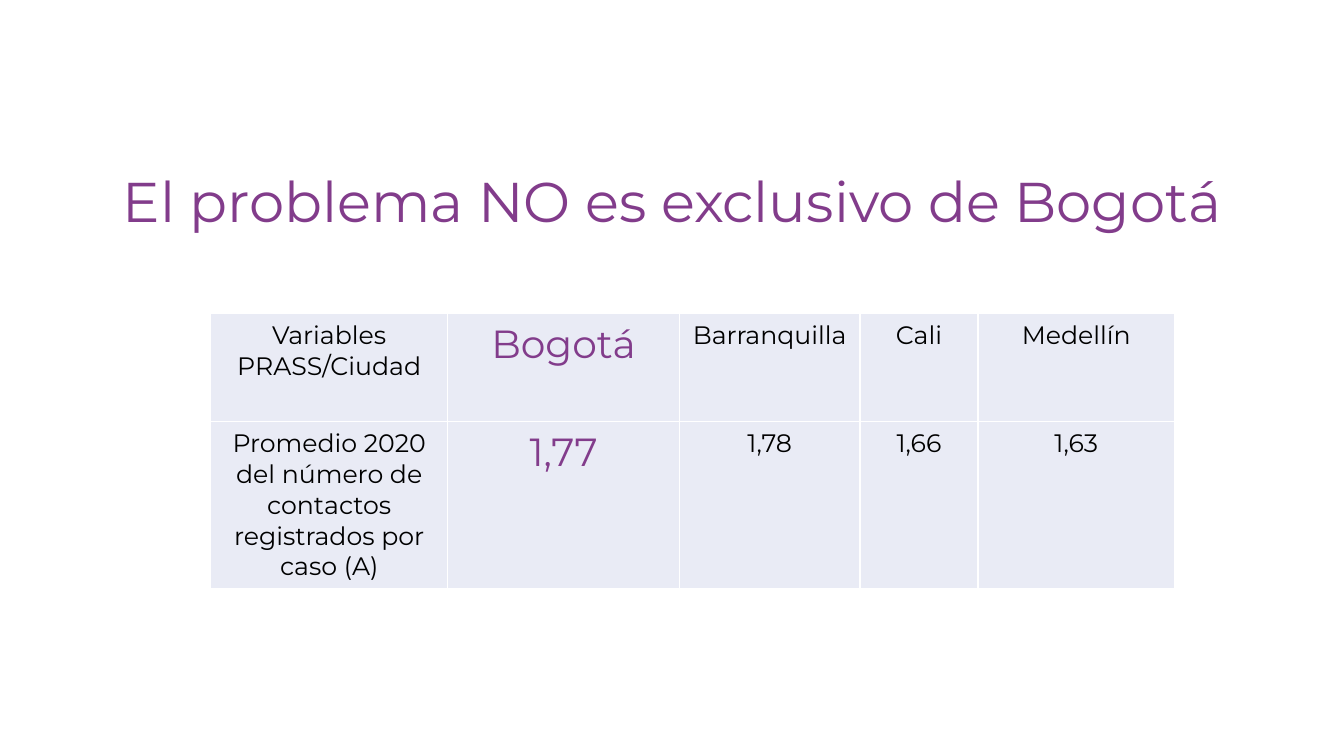
from lxml.etree import SubElement
from pptx import Presentation
from pptx.dml.color import RGBColor
from pptx.enum.text import MSO_ANCHOR as Anchor, PP_ALIGN as Align
from pptx.oxml.ns import qn
from pptx.util import Inches, Pt

PURPLE, BLACK, WHITE, PALE = "823C8B", "000000", "FFFFFF", "E9EBF5"


def color(value):
    return RGBColor.from_string(value)


class SlideBuilder:
    """Places elements by percentages of the slide's width and height."""

    font_name = "Montserrat"
    cell_margin = Inches(0.07)

    def __init__(self, presentation):
        self.width = presentation.slide_width
        self.height = presentation.slide_height
        self.slide = presentation.slides.add_slide(presentation.slide_layouts[6])

    def across(self, share):
        return round(self.width * share / 100)

    def down(self, share):
        return round(self.height * share / 100)

    def set_text(self, text_frame, text, size, text_color):
        text_frame.text = text
        text_frame.word_wrap = True
        paragraph = text_frame.paragraphs[0]
        paragraph.alignment = Align.CENTER
        for run in paragraph.runs:
            run.font.name = self.font_name
            run.font.size = Pt(size)
            run.font.color.rgb = color(text_color)
        return paragraph

    def title(self, text, left, top, width, height):
        shape = self.slide.shapes.add_textbox(
            self.across(left), self.down(top), self.across(width), self.down(height))
        shape.text_frame.vertical_anchor = Anchor.MIDDLE
        self.set_text(shape.text_frame, text, 40, PURPLE).line_spacing = 0.9

    def border(self, cell):
        properties = cell._tc.get_or_add_tcPr()
        for side in ("a:lnL", "a:lnR", "a:lnT", "a:lnB"):
            line = SubElement(properties, qn(side), w=str(Pt(1)))
            fill = SubElement(line, qn("a:solidFill"))
            SubElement(fill, qn("a:srgbClr"), val=WHITE)

    def table(self, rows, left, top, widths, heights, highlight):
        table = self.slide.shapes.add_table(
            len(rows), len(widths), self.across(left), self.down(top),
            self.across(sum(widths)), self.down(sum(heights))).table
        for column, width in zip(table.columns, widths):
            column.width = self.across(width)
        for row, height, texts in zip(table.rows, heights, rows):
            row.height = self.down(height)
            for index, (cell, text) in enumerate(zip(row.cells, texts)):
                cell.margin_left = cell.margin_right = self.cell_margin
                cell.margin_top = cell.margin_bottom = self.cell_margin
                self.border(cell)
                cell.fill.solid()
                cell.fill.fore_color.rgb = color(PALE)
                size, text_color = (28, PURPLE) if index == highlight else (18, BLACK)
                self.set_text(cell.text_frame, text, size, text_color)


def main():
    presentation = Presentation()
    presentation.slide_width = Inches(13.33)
    presentation.slide_height = Inches(7.5)
    builder = SlideBuilder(presentation)

    # Title
    builder.title("El problema NO es exclusivo de Bogotá", 5.78, 17.33, 88.45, 19.33)

    # Comparison of cities, with Bogotá highlighted
    builder.table(
        [["Variables PRASS/Ciudad", "Bogotá", "Barranquilla", "Cali", "Medellín"],
         ["Promedio 2020 del número de contactos registrados por caso (A)",
          "1,77", "1,78", "1,66", "1,63"]],
        left=15.68, top=41.47,
        widths=[17.63, 17.25, 13.43, 8.78, 14.63], heights=[14.27, 22.1],
        highlight=1)

    presentation.save("out.pptx")


if __name__ == "__main__":
    main()
